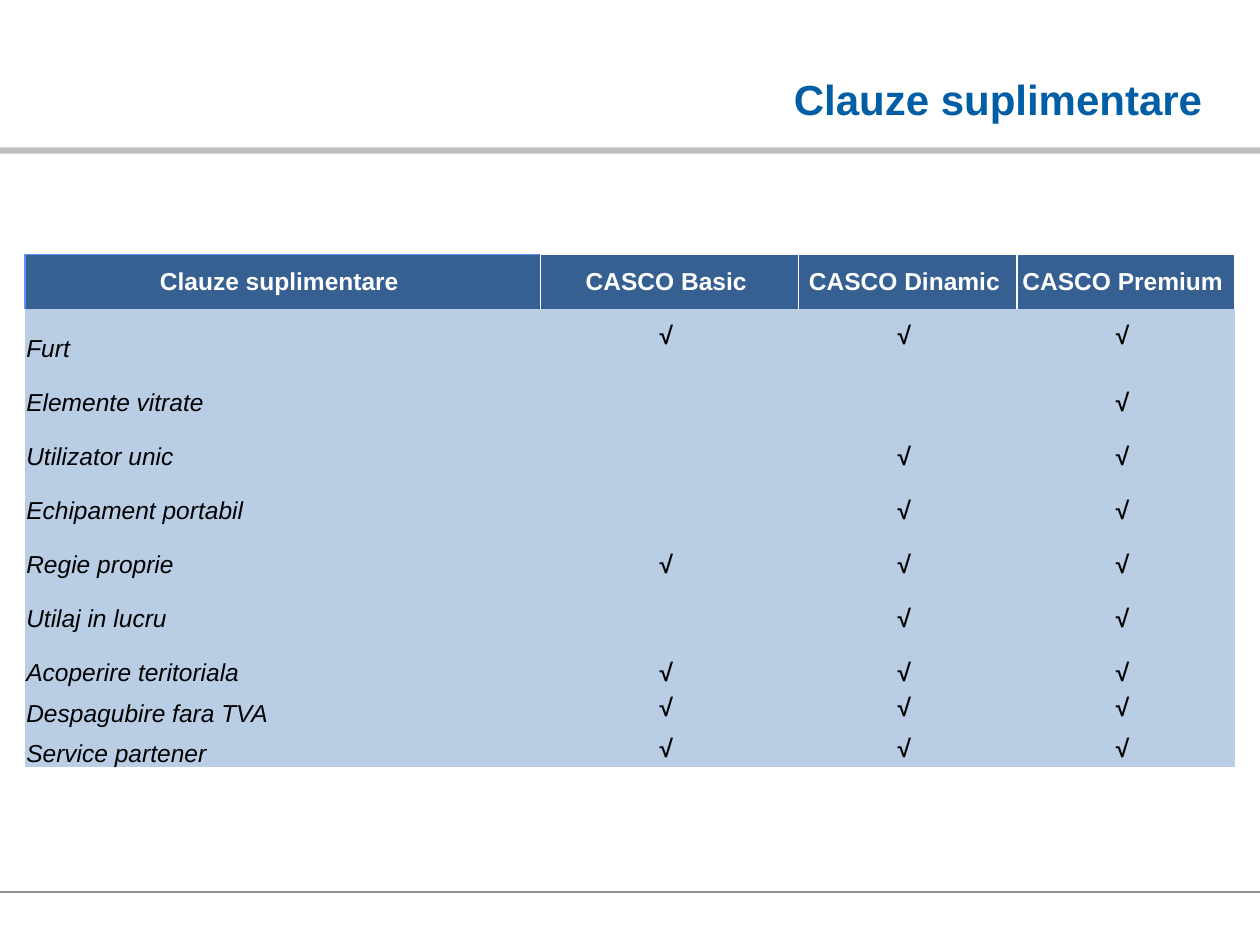
from lxml.etree import SubElement
from pptx import Presentation
from pptx.dml.color import RGBColor
from pptx.enum.shapes import MSO_CONNECTOR, MSO_SHAPE
from pptx.enum.text import MSO_ANCHOR, PP_ALIGN
from pptx.oxml import parse_xml
from pptx.oxml.ns import nsdecls, qn
from pptx.util import Cm, Pt

TITLE_ONLY = 5
NO_TABLE_STYLE = "{2D5ABB26-0587-4C30-8999-92F81FD0307C}"
SLIDE_WIDTH, SLIDE_HEIGHT = 25.4, 19.05

WHITE, BLACK = "FFFFFF", "000000"
TITLE_BLUE = "005EA4"
HEADER_BLUE, BODY_BLUE, EDGE_BLUE = "376092", "B9CDE5", "618FFD"

HEADERS = ["Clauze suplimentare", "CASCO Basic", "CASCO Dinamic", "CASCO Premium"]
# Clause, packages that include it (1 Basic, 2 Dinamic, 3 Premium), tick anchor
CLAUSES = [
    ("Furt", {1, 2, 3}, MSO_ANCHOR.MIDDLE),
    ("Elemente vitrate", {3}, MSO_ANCHOR.BOTTOM),
    ("Utilizator unic", {2, 3}, MSO_ANCHOR.BOTTOM),
    ("Echipament portabil", {2, 3}, MSO_ANCHOR.BOTTOM),
    ("Regie proprie", {1, 2, 3}, MSO_ANCHOR.BOTTOM),
    ("Utilaj in lucru", {2, 3}, MSO_ANCHOR.BOTTOM),
    ("Acoperire teritoriala", {1, 2, 3}, MSO_ANCHOR.BOTTOM),
    ("Despagubire fara TVA", {1, 2, 3}, MSO_ANCHOR.MIDDLE),
    ("Service partener", {1, 2, 3}, MSO_ANCHOR.MIDDLE),
]
COLUMN_WIDTHS = [10.4, 5.2, 4.4, 4.4]
ROW_HEIGHTS = [1.09] * 8 + [0.83, 0.79]


def color(hex_string):
    return RGBColor.from_string(hex_string)


class SlideBuilder:
    font_name = "Arial"

    def __init__(self, slide):
        self.slide = slide

    def format_paragraph(self, paragraph, size, hex_color, align, bold=False, italic=False):
        paragraph.alignment = align
        font = paragraph.font
        font.name, font.size = self.font_name, Pt(size)
        font.bold, font.italic = bold, italic
        font.color.rgb = color(hex_color)

    def title(self, text, left, top, width, height):
        title = self.slide.shapes.title
        title.left, title.top = Cm(left), Cm(top)
        title.width, title.height = Cm(width), Cm(height)
        frame = title.text_frame
        frame.text = text
        frame.vertical_anchor = MSO_ANCHOR.BOTTOM
        self.format_paragraph(frame.paragraphs[0], 24, TITLE_BLUE, PP_ALIGN.RIGHT, bold=True)

    def bar(self, left, top, width, height, hex_color):
        shape = self.slide.shapes.add_shape(
            MSO_SHAPE.RECTANGLE, Cm(left), Cm(top), Cm(width), Cm(height))
        shape.shadow.inherit = False
        shape.fill.solid()
        shape.fill.fore_color.rgb = color(hex_color)
        shape.line.fill.background()

    def horizontal_line(self, left, right, y, hex_color, width):
        line = self.slide.shapes.add_connector(
            MSO_CONNECTOR.STRAIGHT, Cm(left), Cm(y), Cm(right), Cm(y))
        line.line.color.rgb = color(hex_color)
        line.line.width = Pt(width)
        SubElement(line._element.spPr, qn("a:effectLst"))

    def table(self, left, top, column_widths, row_heights):
        frame = self.slide.shapes.add_table(
            len(row_heights), len(column_widths), Cm(left), Cm(top),
            Cm(sum(column_widths)), Cm(sum(row_heights)))
        table = frame.table
        table._tbl.tblPr.find(qn("a:tableStyleId")).text = NO_TABLE_STYLE
        table.horz_banding = False
        for column, width in zip(table.columns, column_widths):
            column.width = Cm(width)
        for row, height in zip(table.rows, row_heights):
            row.height = Cm(height)
        return table

    def cell(self, cell, text, fill, anchor, hex_color, align, bold=False, italic=False):
        cell.margin_left = cell.margin_right = cell.margin_top = Cm(0.03)
        cell.margin_bottom = 0
        cell.vertical_anchor = anchor
        cell.fill.solid()
        cell.fill.fore_color.rgb = color(fill)
        if text:
            cell.text = text + " "
        self.format_paragraph(
            cell.text_frame.paragraphs[0], 14, hex_color, align, bold, italic)

    def cell_borders(self, cell, left, right, top):
        """Borders go before the fill, in the order left, right, top."""
        properties = cell._tc.get_or_add_tcPr()
        for index, (side, hex_color) in enumerate([("L", left), ("R", right), ("T", top)]):
            properties.insert(index, parse_xml(
                f'<a:ln{side} {nsdecls("a")} w="{Pt(1)}"><a:solidFill>'
                f'<a:srgbClr val="{hex_color}"/></a:solidFill></a:ln{side}>'))


def main():
    presentation = Presentation()
    presentation.slide_width, presentation.slide_height = Cm(SLIDE_WIDTH), Cm(SLIDE_HEIGHT)
    slide = presentation.slides.add_slide(presentation.slide_layouts[TITLE_ONLY])
    builder = SlideBuilder(slide)

    builder.bar(0, 2.97, SLIDE_WIDTH, 0.13, "C0C0C0")
    builder.horizontal_line(0, SLIDE_WIDTH, 17.98, "919191", 0.75)
    builder.title("Clauze suplimentare", 2.9, 0.74, 21.59, 1.88)

    table = builder.table(0.5, 5.13, COLUMN_WIDTHS, ROW_HEIGHTS)
    for column, header in enumerate(HEADERS):
        cell = table.cell(0, column)
        builder.cell(cell, header, HEADER_BLUE, MSO_ANCHOR.MIDDLE, WHITE,
                     PP_ALIGN.CENTER, bold=True)
        edge = WHITE if column else EDGE_BLUE
        builder.cell_borders(cell, left=edge, right=WHITE, top=edge)

    for row, (clause, packages, tick_anchor) in enumerate(CLAUSES, start=1):
        builder.cell(table.cell(row, 0), clause, BODY_BLUE, MSO_ANCHOR.BOTTOM, BLACK,
                     PP_ALIGN.JUSTIFY, italic=True)
        for column in range(1, len(HEADERS)):
            tick = "√" if column in packages else ""
            builder.cell(table.cell(row, column), tick, BODY_BLUE, tick_anchor, BLACK,
                         PP_ALIGN.CENTER, bold=True)

    presentation.save("out.pptx")


if __name__ == "__main__":
    main()
